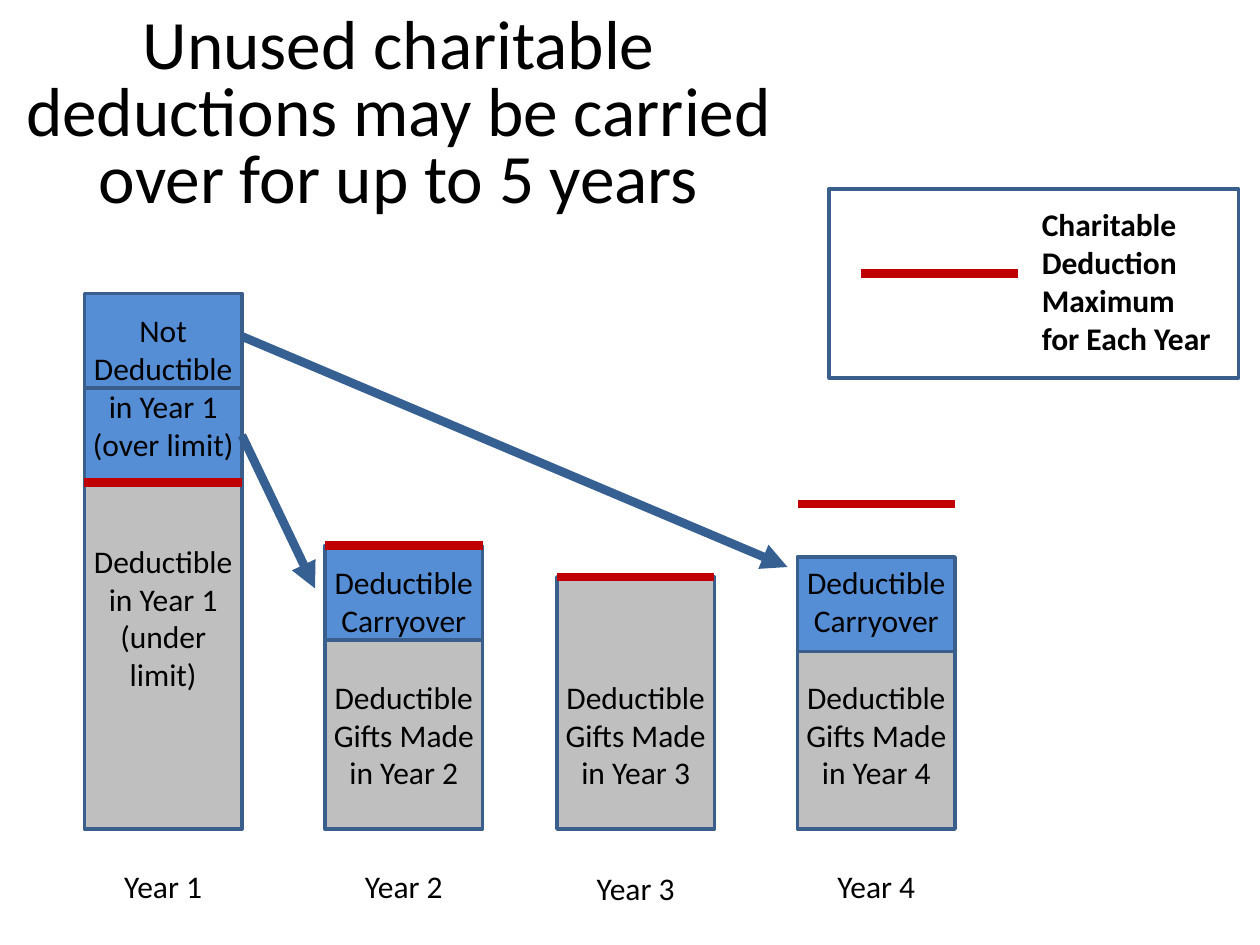
import pptx
import pptx.util
import pptx.dml.color
import pptx.enum.shapes
import pptx.enum.text
import pptx.oxml.ns
from dataclasses import dataclass
from lxml import etree
from pptx.util import Inches


@dataclass(frozen=True)
class Theme:
    font: str = "Calibri"
    text: str = "000000"
    carryover: str = "558ED5"
    deductible: str = "BFBFBF"
    outline: str = "3A5F8C"
    arrow: str = "376092"
    limit: str = "C00000"
    title_size: float = 39.6
    body_size: float = 18
    outline_width: float = 2
    limit_width: float = 4.75
    arrow_width: float = 5


THEME = Theme()
BAR_WIDTH = 1.25
BASELINE = 6.58
YEAR_LEFTS = {1: 0.67, 2: 2.58, 3: 4.42, 4: 6.33}
LIMIT_TOPS = {1: 3.83, 2: 4.33, 3: 4.58, 4: 4}
GIFT_TOPS = {1: 3.83, 2: 5.08, 3: 4.58, 4: 5.17}
CARRYOVER_HEIGHT = 0.75


def rgb(color):
    return pptx.dml.color.RGBColor.from_string(color)


def add_box(slide, left, top, width, height, fill=None):
    box = slide.shapes.add_shape(
        pptx.enum.shapes.MSO_SHAPE.RECTANGLE,
        Inches(left), Inches(top), Inches(width), Inches(height))
    box.shadow.inherit = False
    if fill:
        box.fill.solid()
        box.fill.fore_color.rgb = rgb(fill)
    else:
        box.fill.background()
    box.line.color.rgb = rgb(THEME.outline)
    box.line.width = pptx.util.Pt(THEME.outline_width)
    return box


def add_line(slide, start, end, color, width):
    line = slide.shapes.add_connector(
        pptx.enum.shapes.MSO_CONNECTOR.STRAIGHT,
        *(Inches(value) for value in (*start, *end)))
    line.line.color.rgb = rgb(color)
    line.line.width = pptx.util.Pt(width)
    etree.SubElement(line._element.spPr, pptx.oxml.ns.qn("a:effectLst"))
    return line


def add_limit(slide, left, top):
    """Mark a deduction maximum with a bar-wide line."""
    add_line(slide, (left, top), (left + BAR_WIDTH, top),
             THEME.limit, THEME.limit_width)


def add_arrow(slide, start, end):
    arrow = add_line(slide, start, end, THEME.arrow, THEME.arrow_width)
    etree.SubElement(arrow.line._get_or_add_ln(),
                     pptx.oxml.ns.qn("a:tailEnd"), type="triangle")
    return arrow


def add_text(slide, text, left, top, width, height, size=THEME.body_size,
             bold=False, centered=True, side_inset=0.1):
    box = slide.shapes.add_textbox(
        Inches(left), Inches(top), Inches(width), Inches(height))
    frame = box.text_frame
    frame.word_wrap = True
    frame.margin_left = frame.margin_right = Inches(side_inset)
    frame.text = text
    paragraph = frame.paragraphs[0]
    if centered:
        paragraph.alignment = pptx.enum.text.PP_ALIGN.CENTER
    font = paragraph.runs[0].font
    font.name = THEME.font
    font.size = pptx.util.Pt(size)
    font.bold = bold
    font.color.rgb = rgb(THEME.text)
    return frame


def add_title(slide):
    frame = add_text(
        slide, "Unused charitable deductions may be carried over for up to 5 years",
        0, 0.3, 6.33, 1.25, size=THEME.title_size)
    frame.vertical_anchor = pptx.enum.text.MSO_ANCHOR.MIDDLE
    frame.paragraphs[0].line_spacing = 0.8


def add_carryover(slide, year, top):
    return add_box(slide, YEAR_LEFTS[year], top, BAR_WIDTH,
                   CARRYOVER_HEIGHT, THEME.carryover)


def add_bar_text(slide, year, text, top, height):
    add_text(slide, text, YEAR_LEFTS[year], top, BAR_WIDTH, height, side_inset=0)


def add_bars(slide):
    for year, left in YEAR_LEFTS.items():
        top = GIFT_TOPS[year]
        add_box(slide, left, top, BAR_WIDTH, BASELINE - top, THEME.deductible)
    first_excess = add_carryover(slide, 1, 3.08)
    add_carryover(slide, 1, 2.33)
    add_carryover(slide, 2, 4.33)
    add_carryover(slide, 4, 4.42)

    for year, left in YEAR_LEFTS.items():
        add_limit(slide, left, LIMIT_TOPS[year])

    bar_right = YEAR_LEFTS[1] + BAR_WIDTH
    to_year_2 = add_arrow(slide, (bar_right, 3.46), (2.5, 4.67))
    to_year_2.begin_connect(first_excess, 3)
    add_arrow(slide, (bar_right, 2.67), (6.25, 4.5))


def add_bar_labels(slide):
    add_bar_text(slide, 1, "Not Deductible in Year 1 (over limit)", 2.42, 1.31)
    add_bar_text(slide, 1, "Deductible in Year 1 (under limit)", 4.25, 1.31)
    for year in (2, 4):
        add_bar_text(slide, year, "Deductible Carryover", 4.42, 0.71)
    for year in (2, 3, 4):
        add_bar_text(slide, year, f"Deductible Gifts Made in Year {year}", 5.33, 1.01)
    for year, left in YEAR_LEFTS.items():
        top = 6.85 if year == 3 else 6.83
        add_text(slide, f"Year {year}", left, top, BAR_WIDTH, 0.4)


def add_legend(slide):
    add_box(slide, 6.58, 1.5, 3.25, 1.5)
    add_limit(slide, 6.83, 2.17)
    add_text(slide, "Charitable Deduction Maximum for Each Year",
             8.17, 1.58, 1.58, 1.31, bold=True, centered=False)


def main():
    deck = pptx.Presentation()
    deck.slide_width, deck.slide_height = Inches(10), Inches(7.5)
    slide = deck.slides.add_slide(deck.slide_layouts[6])
    add_title(slide)
    add_bars(slide)
    add_bar_labels(slide)
    add_legend(slide)
    deck.save("out.pptx")


if __name__ == "__main__":
    main()
